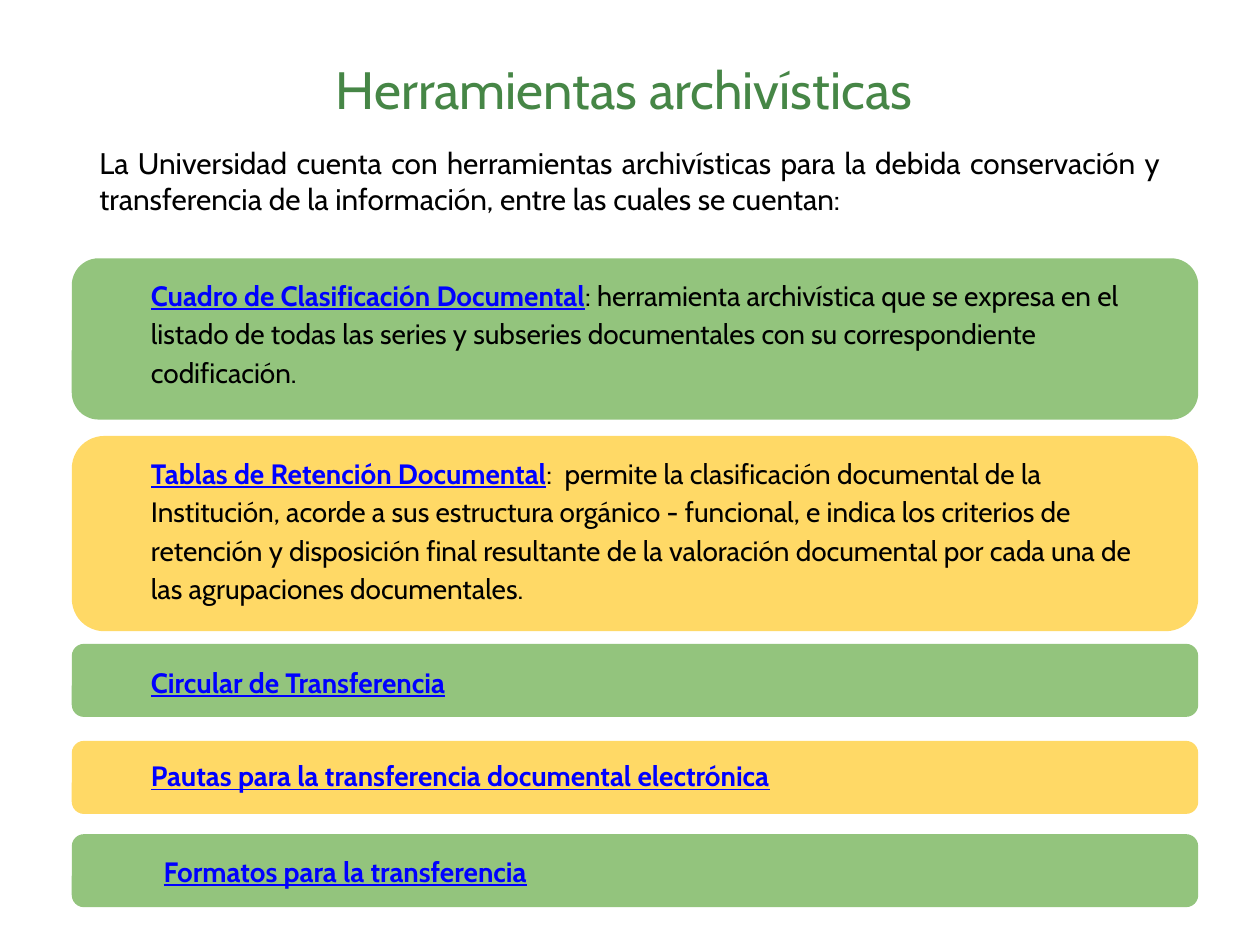
from dataclasses import dataclass

from pptx import Presentation
from pptx.dml.color import RGBColor
from pptx.enum.shapes import MSO_SHAPE as Shape
from pptx.enum.text import MSO_ANCHOR as Anchor, PP_ALIGN as Align
from pptx.slide import Slide
from pptx.text.text import _Run as Run
from pptx.util import Inches, Pt

COLUMNS, ROWS = 100, 75
SLIDE_WIDTH, SLIDE_HEIGHT = Inches(10), Inches(7.5)
FONT = "Cabin"
GREEN, YELLOW = "93C47D", "FFD966"
TITLE_GREEN, LINK_BLUE, BLACK = "468646", "0000FF", "000000"
BAR_LEFT, BAR_WIDTH = 5.7, 89.4


@dataclass(frozen=True)
class Box:
    """A rectangle in grid columns and rows."""
    left: float
    top: float
    width: float
    height: float

    def lengths(self) -> tuple[int, int, int, int]:
        """Return the rectangle in slide units."""
        column, row = SLIDE_WIDTH / COLUMNS, SLIDE_HEIGHT / ROWS
        return (round(self.left * column), round(self.top * row),
                round(self.width * column), round(self.height * row))


@dataclass(frozen=True)
class Tool:
    """An archival tool: its coloured bar, its name and its description."""
    top: float
    height: float
    text_box: Box
    name: str
    description: str = ""


TOOLS = (
    Tool(20.5, 12.8, Box(11, 20.7, 80.4, 10.6), "Cuadro de Clasificación Documental",
         ": herramienta archivística que se expresa en el listado de todas las series "
         "y subseries documentales con su correspondiente codificación."),
    Tool(34.6, 15.5, Box(11, 34.8, 80.4, 14.5), "Tablas de Retención Documental",
         ":  permite la clasificación documental de la Institución, acorde a sus "
         "estructura orgánico - funcional, e indica los criterios de retención y "
         "disposición final resultante de la valoración documental por cada una de "
         "las agrupaciones documentales."),
    Tool(51.1, 5.8, Box(11, 51.4, 84, 5.8), "Circular de Transferencia"),
    Tool(58.8, 5.8, Box(11, 58.8, 84, 5.8),
         "Pautas para la transferencia documental electrónica"),
    Tool(66.2, 5.8, Box(12, 66.4, 61.6, 5.8), "Formatos para la transferencia"),
)


def color(value: str) -> RGBColor:
    """Turn a hex string into a colour."""
    return RGBColor.from_string(value)


def format_run(run: Run, size: float, hex_color: str, link: bool = False) -> None:
    """Set the font of a run, bold and underlined for a link look."""
    font = run.font
    font.name, font.size = FONT, Pt(size)
    font.bold = font.underline = link
    font.color.rgb = color(hex_color)


def add_text_frame(slide: Slide, box: Box, inset: float):
    """Add a wrapping text box and return its text frame."""
    frame = slide.shapes.add_textbox(*box.lengths()).text_frame
    frame.word_wrap = True
    frame.vertical_anchor = Anchor.TOP
    frame.margin_left = frame.margin_right = Inches(0.1)
    frame.margin_top = frame.margin_bottom = Inches(inset)
    return frame


def add_heading(slide: Slide, box: Box, text: str, size: float,
                hex_color: str, alignment: Align) -> None:
    """Add a single paragraph above the tools."""
    frame = add_text_frame(slide, box, 0.05)
    frame.text = text
    paragraph = frame.paragraphs[0]
    paragraph.alignment = alignment
    format_run(paragraph.runs[0], size, hex_color)


def add_tool(slide: Slide, tool: Tool, fill: str) -> None:
    """Draw a tool's bar and its text."""
    bar = Box(BAR_LEFT, tool.top, BAR_WIDTH, tool.height)
    shape = slide.shapes.add_shape(Shape.FLOWCHART_ALTERNATE_PROCESS, *bar.lengths())
    shape.shadow.inherit = False
    shape.fill.solid()
    shape.fill.fore_color.rgb = color(fill)
    shape.line.fill.background()

    frame = add_text_frame(slide, tool.text_box, 0.1)
    frame.text = tool.name
    paragraph = frame.paragraphs[0]
    paragraph.line_spacing = 1.15
    format_run(paragraph.runs[0], 16, LINK_BLUE, link=True)
    if tool.description:
        run = paragraph.add_run()
        run.text = tool.description
        format_run(run, 16, BLACK)


def main() -> None:
    """Build and save the slide."""
    presentation = Presentation()
    presentation.slide_width, presentation.slide_height = SLIDE_WIDTH, SLIDE_HEIGHT
    slide = presentation.slides.add_slide(presentation.slide_layouts[6])
    for index, tool in enumerate(TOOLS):
        add_tool(slide, tool, (GREEN, YELLOW)[index % 2])
    add_heading(slide, Box(6.9, 4, 86.2, 7.3), "Herramientas archivísticas ",
                30, TITLE_GREEN, Align.CENTER)
    add_heading(slide, Box(6.9, 11, 86.2, 9.5),
                "La Universidad cuenta con herramientas archivísticas para la debida "
                "conservación y transferencia de la información, entre las cuales se "
                "cuentan:", 17, BLACK, Align.JUSTIFY)
    presentation.save("out.pptx")


if __name__ == "__main__":
    main()
